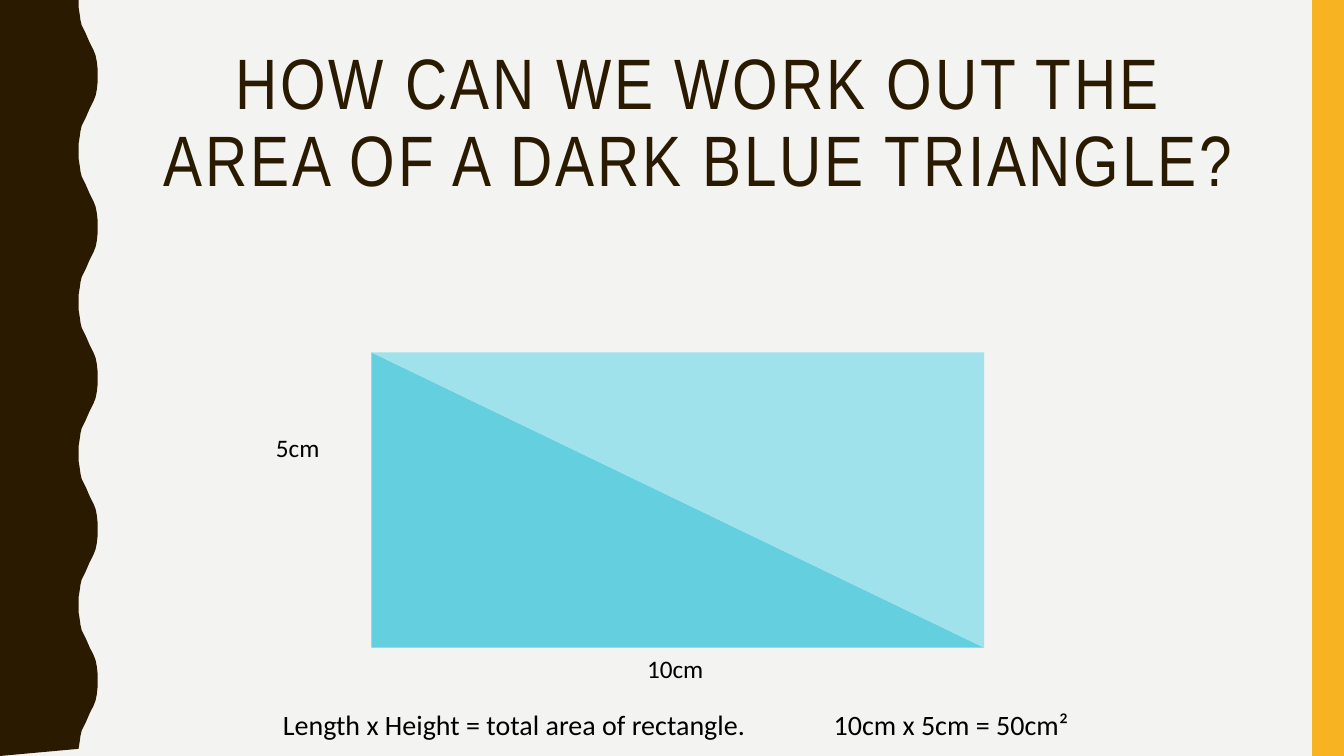
from lxml import etree
from pptx import Presentation
from pptx import util as u
from pptx.dml.color import RGBColor
from pptx.enum import shapes, text
from pptx.oxml.ns import qn

BROWN, YELLOW, PAPER = "2A1A00", "F8B323", "F3F3F2"
DARK_BLUE, LIGHT_BLUE, BLACK = "64CFDE", "9FE2EB", "000000"
WIDTH, HEIGHT = 33.87, 19.05
WAVES = 5
HALF_WAVE = [
    (0, 1.98), (0.18, 1.98), (0.36, 2.01), (0.51, 2.03), (0.64, 2.06), (0.84, 2.16),
    (1.07, 2.26), (1.27, 2.36), (1.4, 2.41), (1.55, 2.44), (1.73, 2.46), (1.9, 2.46),
]


def color(value):
    return RGBColor.from_string(value)


def paint(shape, fill):
    shape.shadow.inherit = False
    shape.fill.solid()
    shape.fill.fore_color.rgb = color(fill)
    shape.line.fill.background()


def add_block(page, kind, area, fill, rotation=0):
    block = page.shapes.add_shape(kind, *map(u.Cm, area))
    block.rotation = rotation
    paint(block, fill)


def add_wavy_edge(page):
    period = HEIGHT / WAVES
    wave = HALF_WAVE + [(period - y, x) for y, x in reversed(HALF_WAVE[1:])]
    points = [(x, n * period + y) for n in range(WAVES) for y, x in wave]
    outline = [(u.Cm(x), u.Cm(y)) for x, y in points + [(0, HEIGHT)]]
    builder = page.shapes.build_freeform(0, 0)
    builder.add_line_segments(outline, close=True)
    paint(builder.convert_to_shape(), BROWN)


def write(para, words, font, size, ink, align):
    para.alignment = align
    span = para.add_run()
    span.text = words
    span.font.name = font
    span.font.size = u.Pt(size)
    span.font.color.rgb = color(ink)
    return span


def set_title(page, words):
    title = page.shapes.title
    title.left, title.top, title.width, title.height = map(u.Cm, (3.48, 1.07, 28.27, 4.14))
    title.text_frame.vertical_anchor = text.MSO_ANCHOR.MIDDLE
    title.text_frame.auto_size = text.MSO_AUTO_SIZE.NONE
    para = title.text_frame.paragraphs[0]
    para.line_spacing = 0.9
    span = write(para, words, "Arial Narrow", 51, BROWN, text.PP_ALIGN.CENTER)
    span.font._element.set("spc", "200")


def add_label(page, words, area, size=18, align=text.PP_ALIGN.CENTER):
    box = page.shapes.add_textbox(*map(u.Cm, area))
    box.text_frame.word_wrap = True
    para = box.text_frame.paragraphs[0]
    write(para, words, "Calibri", size, BLACK, align)
    return para


def add_tab_stop(para, position):
    stops = etree.SubElement(para._p.get_or_add_pPr(), qn("a:tabLst"))
    etree.SubElement(stops, qn("a:tab"), pos=str(u.Cm(position)), algn="l")


def main():
    deck = Presentation()
    deck.slide_width, deck.slide_height = u.Cm(WIDTH), u.Cm(HEIGHT)
    page = deck.slides.add_slide(deck.slide_layouts[5])
    page.background.fill.solid()
    page.background.fill.fore_color.rgb = color(PAPER)

    add_wavy_edge(page)
    add_block(page, shapes.MSO_SHAPE.RECTANGLE, (33.07, 0, 0.8, HEIGHT), YELLOW)
    set_title(page, "HOW CAN WE WORK OUT THE AREA OF A DARK BLUE TRIANGLE?")

    rectangle = (9.36, 8.88, 15.44, 7.44)
    for fill, rotation in ((DARK_BLUE, 0), (LIGHT_BLUE, 180)):
        add_block(page, shapes.MSO_SHAPE.RIGHT_TRIANGLE, rectangle, fill, rotation)

    add_label(page, "10cm", (13.28, 16.33, 7.47, 1.02))
    add_label(page, "5cm", (5.64, 10.77, 3.73, 1.02))
    formula = add_label(
        page,
        "Length x Height = total area of rectangle.\t10cm x 5cm = 50cm²",
        (6.88, 17.7, 26.6, 1.25),
        20,
        text.PP_ALIGN.LEFT,
    )
    add_tab_stop(formula, 13.88)
    deck.save("out.pptx")


if __name__ == "__main__":
    main()
